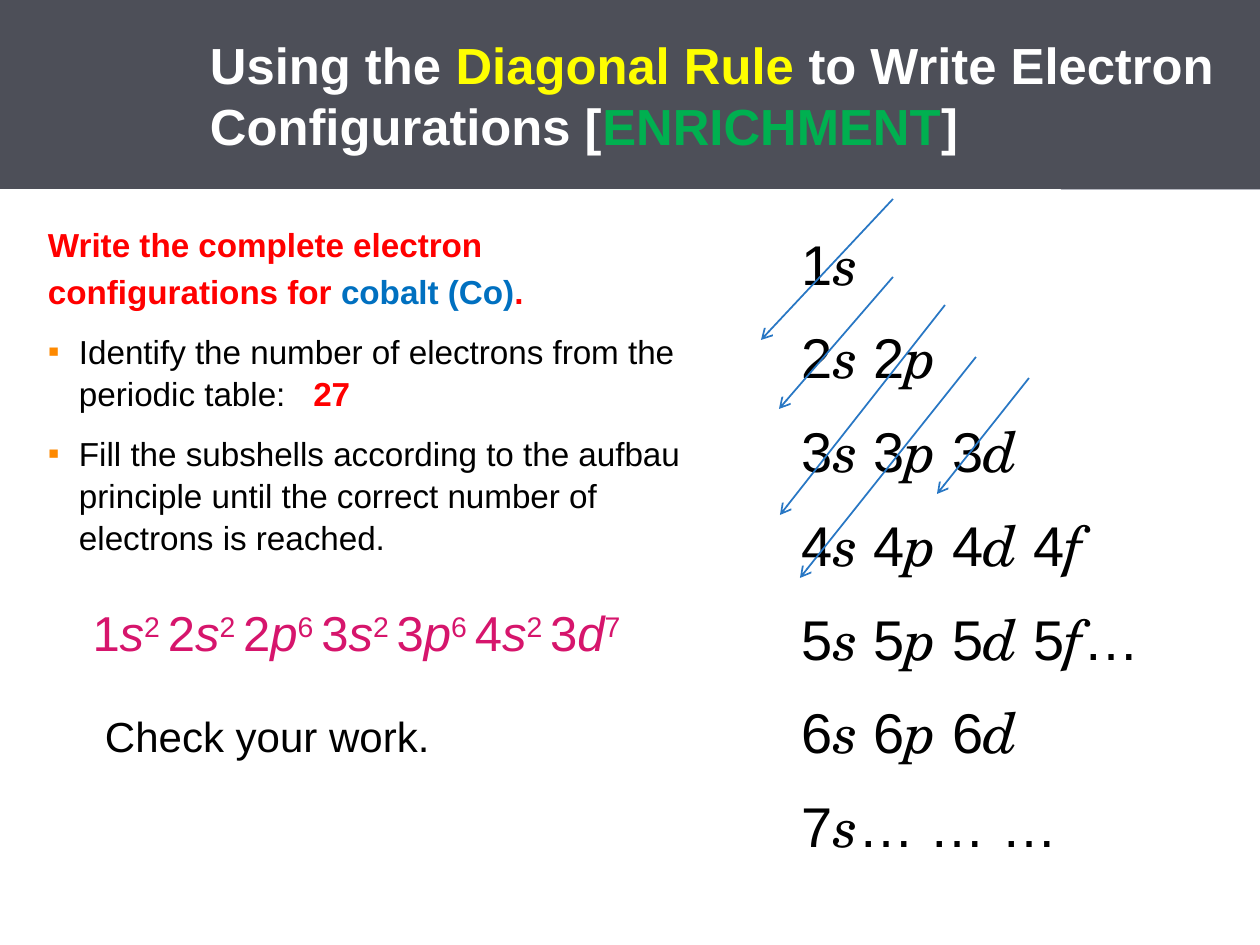
from itertools import groupby

from lxml import etree
from pptx import Presentation
from pptx import util as u
from pptx.dml.color import RGBColor
from pptx.enum import shapes, text
from pptx.oxml.ns import qn

THEME = {
    "font": "Arial", "orbital_font": "TeX Gyre Schola",
    "white": "FFFFFF", "black": "000000", "band": "4D4F58", "corner": "B5B7BF",
    "yellow": "FFFF00", "green": "00B050", "red": "FF0000", "blue": "0070C0",
    "bullet": "FE8900", "arrow": "2877C4", "pink": "D6156C",
    "title": 29, "body": 19, "rows": 32, "config": 28, "check": 24,
}

TITLE = [("Using the ", "white"), ("Diagonal Rule ", "yellow"),
         ("to Write Electron Configurations [", "white"),
         ("ENRICHMENT", "green"), ("]", "white")]
TASK = [("Write the complete electron configurations for ", "red"),
        ("cobalt (Co)", "blue"), (".", "red")]
STEPS = [
    ("Identify the number of electrons from the periodic table:", "27"),
    ("Fill the subshells according to the aufbau principle until the correct "
     "number of electrons is reached.", None),
]
SUBSHELL_ROWS = ["1s", "2s 2p", "3s 3p 3d", "4s 4p 4d 4f", "5s 5p 5d 5f…",
                 "6s 6p 6d", "7s… … …"]
COBALT = ["1s2", "2s2", "2p6", "3s2", "3p6", "4s2", "3d7"]
CHECK = "Check your work."
# Diagonal arrows in px: start x, start y, end x, end y
DIAGONALS = [(893, 199, 761, 340), (893, 277, 779, 409), (945, 305, 780, 515),
             (976, 357, 800, 578), (1029, 378, 937, 494)]

SLIDE_W, SLIDE_H = 1260, 945
EMU_PER_PX = 914400 / 126


def px(n):
    return u.Emu(round(n * EMU_PER_PX))


def rgb(name):
    return RGBColor.from_string(THEME[name])


def add_run(p, words, size, color, font="font", bold=False, italic=False, **attrs):
    """Add a run; attrs are raw run attributes such as baseline or spc."""
    r = p.add_run()
    r.text = words
    formats = {"name": THEME[font], "size": u.Pt(THEME[size]),
               "bold": bold, "italic": italic}
    for key, value in formats.items():
        setattr(r.font, key, value)
    r.font.color.rgb = rgb(color)
    for key, value in attrs.items():
        r.font._element.set(key, str(value))


def format_paragraph(p, left=0, hang=0, **formats):
    pPr = p._p.get_or_add_pPr()
    pPr.set("marL", str(px(left)))
    pPr.set("indent", str(-px(hang)))
    for key, value in formats.items():
        setattr(p, key, value)


def add_bullet(p):
    pPr = p._p.get_or_add_pPr()
    color = etree.SubElement(pPr, qn("a:buClr"))
    etree.SubElement(color, qn("a:srgbClr"), val=THEME["bullet"])
    etree.SubElement(pPr, qn("a:buFont"), typeface=THEME["font"])
    etree.SubElement(pPr, qn("a:buChar"), char="▪")


def set_frame(tf, margins, anchor=text.MSO_ANCHOR.TOP):
    sides = ("margin_left", "margin_top", "margin_right", "margin_bottom")
    formats = dict(zip(sides, map(px, margins)), word_wrap=True, vertical_anchor=anchor)
    for key, value in formats.items():
        setattr(tf, key, value)
    return tf


def add_text(s, box, margins=(13, 6, 13, 6)):
    return set_frame(s.shapes.add_textbox(*map(px, box)).text_frame, margins)


def add_rect(s, box, color):
    sp = s.shapes.add_shape(shapes.MSO_SHAPE.RECTANGLE, *map(px, box))
    sp.shadow.inherit = False
    sp.fill.solid()
    sp.fill.fore_color.rgb = rgb(color)
    sp.line.fill.background()
    return sp


def add_title(s):
    add_rect(s, (1061, 0, 199, 190), "corner")
    band = add_rect(s, (0, 0, SLIDE_W, 189), "band")
    tf = set_frame(band.text_frame, (45, 19, 45, 19), text.MSO_ANCHOR.MIDDLE)
    p = tf.paragraphs[0]
    format_paragraph(p, left=165, alignment=text.PP_ALIGN.LEFT)
    for words, color in TITLE:
        add_run(p, words, "title", color, bold=True)


def add_steps(s):
    tf = add_text(s, (0, 190, 683, 755), (48, 27, 0, 27))
    p = tf.paragraphs[0]
    format_paragraph(p, line_spacing=1.18)
    for words, color in TASK:
        add_run(p, words, "body", color, bold=True)
    for step, answer in STEPS:
        p = tf.add_paragraph()
        add_bullet(p)
        format_paragraph(p, 31, 31, line_spacing=1.05, space_before=u.Pt(10.5))
        add_run(p, step, "body", "black")
        if answer:
            add_run(p, " ", "body", "black", spc=1056)
            add_run(p, answer, "body", "red", bold=True)


def add_subshells(s):
    tf = add_text(s, (789, 213, 450, 654))
    for i, row in enumerate(SUBSHELL_ROWS):
        p = tf.add_paragraph() if i else tf.paragraphs[0]
        format_paragraph(p, line_spacing=1.15, space_before=u.Pt(9.4 if i else 0))
        for is_orbital, chars in groupby(row, lambda c: c in "spdf"):
            add_run(p, "".join(chars), "rows", "black",
                    "orbital_font" if is_orbital else "font", italic=is_orbital)


def add_diagonals(s):
    for ends in DIAGONALS:
        line = s.shapes.add_connector(shapes.MSO_CONNECTOR.STRAIGHT, *map(px, ends))
        line.line.color.rgb = rgb("arrow")
        line.line.width = u.Pt(1)
        etree.SubElement(line.line._get_or_add_ln(), qn("a:tailEnd"), type="arrow")
        etree.SubElement(line._element.spPr, qn("a:effectLst"))


def add_answer(s):
    tf = add_text(s, (29, 597, 655, 174))
    p = tf.paragraphs[0]
    p.alignment = text.PP_ALIGN.CENTER
    for i, (shell, orbital, electrons) in enumerate(COBALT, 1):
        gap = " " if i < len(COBALT) else ""
        add_run(p, shell, "config", "pink")
        add_run(p, orbital, "config", "pink", italic=True)
        add_run(p, electrons + gap, "config", "pink", baseline=30000)
    p = tf.add_paragraph()
    format_paragraph(p, left=63, space_before=u.Pt(27.6))
    add_run(p, CHECK, "check", "black")


def main():
    prs = Presentation()
    prs.slide_width, prs.slide_height = px(SLIDE_W), px(SLIDE_H)
    s = prs.slides.add_slide(prs.slide_layouts[6])
    for add_part in (add_title, add_steps, add_subshells, add_diagonals, add_answer):
        add_part(s)
    prs.save("out.pptx")


if __name__ == "__main__":
    main()
